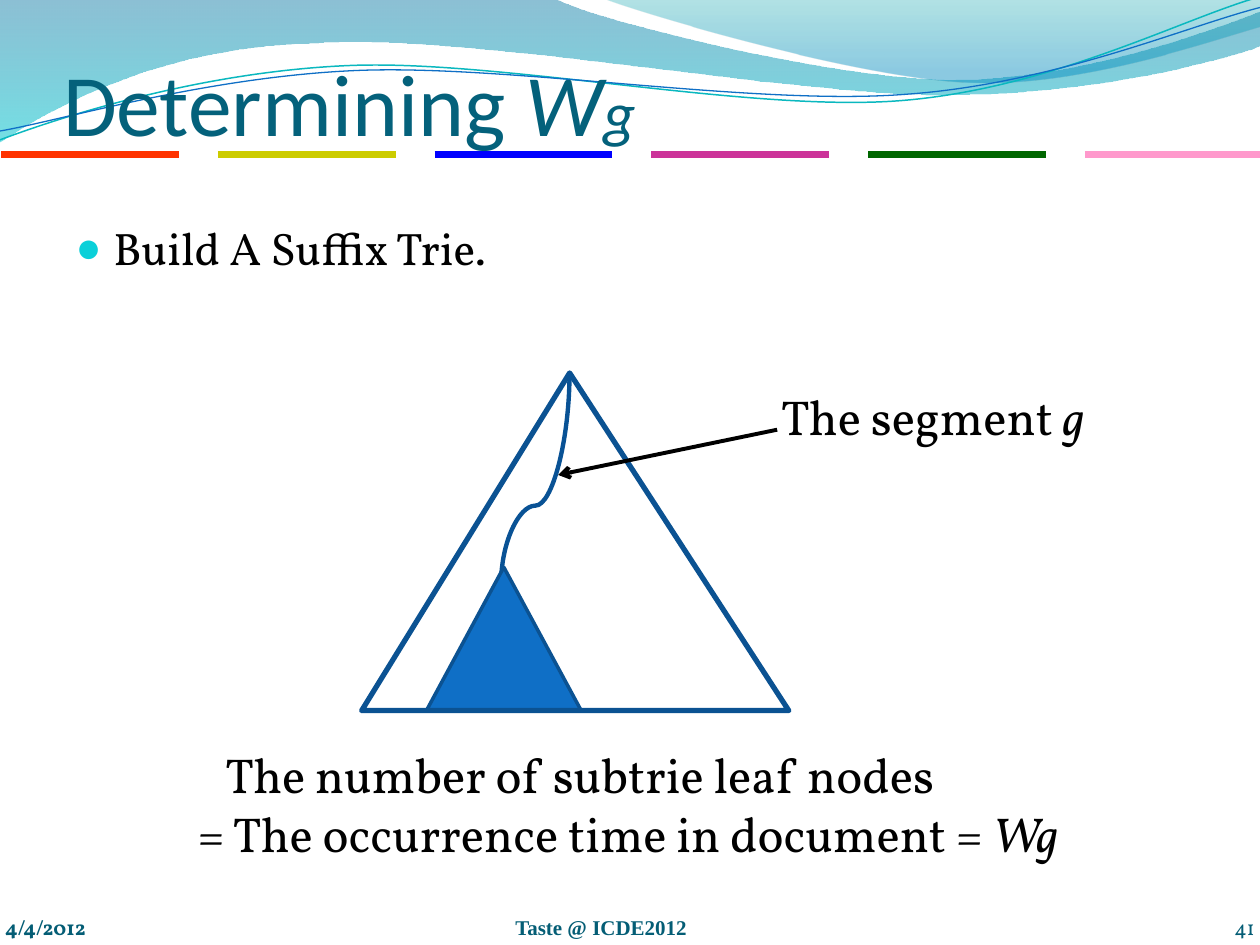
import math
import pptx
import pptx.util
import pptx.dml.color
import pptx.enum.shapes
import pptx.enum.text
import pptx.oxml
import pptx.oxml.ns

WIDTH, HEIGHT = 10, 7.5
SHAPES = pptx.enum.shapes.MSO_SHAPE
LINES = pptx.enum.shapes.MSO_CONNECTOR
ANCHOR = pptx.enum.text.MSO_ANCHOR
ALIGN = pptx.enum.text.PP_ALIGN
FIT = pptx.enum.text.MSO_AUTO_SIZE
INK = "000000"
FOOT_INK = "045D75"


def inch(value):
    """Return a length in inches."""
    return pptx.util.Inches(value)


def rgb(colour):
    """Turn a hex string into a colour."""
    return pptx.dml.color.RGBColor.from_string(colour)


def element(tag, **attributes):
    """Make a DrawingML element."""
    made = pptx.oxml.parse_xml(f"<a:{tag} {pptx.oxml.ns.nsdecls('a')}/>")
    for name, value in attributes.items():
        made.set(name, value)
    return made


def apply(target, values):
    """Set each attribute named in a dict."""
    for name, value in values.items():
        setattr(target, name, value)


def part(box, x, y, w=0, h=0):
    """Return the sub-box given by shares of a box."""
    left, top, width, height = box
    return left + x * width, top + y * height, w * width, h * height


def outline(shape, colour, weight):
    """Give a shape or connector its line."""
    shape.line.color.rgb = rgb(colour)
    shape.line.width = pptx.util.Pt(weight)


def connect(slide, kind, start, end, colour, weight):
    """Draw a connector without a shadow."""
    link = slide.shapes.add_connector(kind, *map(inch, (*start, *end)))
    outline(link, colour, weight)
    link._element.spPr.append(element("effectLst"))
    return link


def write(paragraph, runs, size, font, colour, **style):
    """Write runs of (text, changed font values) in a paragraph."""
    base = dict(size=pptx.util.Pt(size), name=font, **style)
    for text, changes in runs:
        run = paragraph.add_run()
        run.text = text
        apply(run.font, {**base, **changes})
        run.font.color.rgb = rgb(colour)


def turn(point, pivot, degrees):
    """Turn a point clockwise about a pivot."""
    angle = math.radians(degrees)
    dx, dy = point[0] - pivot[0], point[1] - pivot[1]
    return (pivot[0] + dx * math.cos(angle) - dy * math.sin(angle),
            pivot[1] + dx * math.sin(angle) + dy * math.cos(angle))


def wave(slide, box, start, segments, closed, tilt=0, pivot=(0, 0)):
    """Draw cubic curves and straight steps on a grid of ten columns."""
    left, top, width, _ = box
    cell = width / 10
    pairs = [start] + [step[i:i + 2] for step in segments for i in range(0, len(step), 2)]
    points = [(inch(left + x * cell), inch(top + y * cell))
              for x, y in (turn(pair, pivot, tilt) for pair in pairs)]
    builder = slide.shapes.build_freeform(*points[0])
    builder.add_line_segments(points[1:], close=closed)
    shape = builder.convert_to_shape()
    shape.shadow.inherit = False
    shape.rotation = -tilt % 360
    steps = iter(list(shape._element.iter(pptx.oxml.ns.qn("a:lnTo"))))
    for segment in segments:
        first = next(steps)
        if len(segment) == 6:
            bend = element("cubicBezTo")
            first.addprevious(bend)
            for step in (first, next(steps), next(steps)):
                bend.append(step[0])
                step.getparent().remove(step)
    return shape


def header_waves(slide, box):
    """Draw the translucent bands and the thin waves."""
    bands = [
        ((0, 0), [(4.4, -0.01), (4.76, 0.17, 6.64, 0.63, 7.58, 0.63), (8.53, 0.63, 9.58, 0.26, 10, 0.09),
                  (10.01, 0.36), (9.83, 0.44, 8.7, 0.76, 7.46, 0.75), (6.22, 0.75, 3.82, 0.28, 2.57, 0.34),
                  (1.29, 0.36, 0.46, 0.83, -0.01, 1.13), (0, 0)],
         [(0, "0074A1", 45), (1, "00C6CF", 55)]),
        ((4.79, -0.01), [(5.09, 0.11, 6.82, 0.62, 7.69, 0.65), (8.56, 0.69, 9.61, 0.32, 10, 0.21),
                         (10, 0), (4.79, -0.01)],
         [(0, "00A1A9", 30), (0.8, "008BBF", 45)]),
    ]
    for start, segments, stops in bands:
        band = wave(slide, box, start, segments, True)
        band.line.fill.background()
        band.fill.gradient()
        band.fill.gradient_angle = 270
        for stop, (position, colour, opacity) in zip(band.fill.gradient_stops, stops):
            stop.position = position
            stop.color.rgb = rgb(colour)
        colours = band._element.spPr.iter(pptx.oxml.ns.qn("a:srgbClr"))
        for colour, stop in zip(colours, stops):
            colour.append(element("alpha", val=str(stop[2] * 1000)))
    threads = [
        ((0, 1.11), [(0.48, 0.93, 1.58, 0.57, 2.77, 0.52), (3.95, 0.47, 5.93, 0.89, 7.13, 0.8),
                     (8.33, 0.71, 9.38, 0.15, 9.98, -0.02)], "0AB8BF", 0.85, (4.99, 0.58)),
        ((0, 1.04), [(0.47, 0.96, 1.64, 0.61, 2.83, 0.56), (4.03, 0.51, 5.97, 0.84, 7.17, 0.75),
                     (8.36, 0.67, 9.41, 0.21, 10, 0.06)], "0F6FC6", 0.75, (5, 0.59)),
    ]
    for start, segments, colour, weight, pivot in threads:
        thread = wave(slide, box, start, segments, False, 2.7, pivot)
        thread.fill.background()
        outline(thread, colour, weight)


def colour_rule(slide, box):
    """Draw the row of evenly spaced coloured dashes."""
    left, top, width, _ = box
    pitch, dash = width * 0.172, width * 0.141
    for column, colour in enumerate(("FF3300", "CCCC00", "0000FF", "CC3399", "006600", "FF99CC")):
        x = left + column * pitch
        connect(slide, LINES.STRAIGHT, (x, top), (x + dash, top), colour, 4)


def place(slide, holder, box):
    """Move a placeholder to a box, in front of what is drawn."""
    apply(holder, dict(zip(("left", "top", "width", "height"), map(inch, box))))
    slide.shapes._spTree.append(holder._element)
    holder.text_frame.auto_size = FIT.NONE
    return holder.text_frame


def heading(slide, box):
    """Fill the title."""
    frame = place(slide, slide.shapes.title, box)
    apply(frame, dict(margin_left=0, margin_right=0, margin_bottom=0, vertical_anchor=ANCHOR.BOTTOM))
    title = frame.paragraphs[0]
    title.alignment = ALIGN.LEFT
    runs = [("Determining ", {}), ("W", {"italic": True}), ("g", {"italic": True, "size": pptx.util.Pt(36)})]
    write(title, runs, 50, "Calibri", "04617B")


def bullets(slide, box):
    """Fill the body list."""
    item = place(slide, slide.placeholders[1], box).paragraphs[0]
    item.space_before = 0
    properties = item._p.get_or_add_pPr()
    properties.set("marL", str(inch(0.3)))
    properties.set("indent", str(inch(-0.3)))
    tint = element("buClr")
    tint.append(element("srgbClr", val="0BD0D9"))
    for mark in (tint, element("buSzPct", val="95000"), element("buChar", char="●")):
        properties.append(mark)
    write(item, [("Build A Suffix Trie.", {})], 26, "Vollkorn", INK)


def triangle(slide, box, peak, weight, fill=None):
    """Draw a triangle with its peak at a share of the width."""
    shape = slide.shapes.add_shape(SHAPES.ISOSCELES_TRIANGLE, *map(inch, box))
    shape.shadow.inherit = False
    shape.adjustments[0] = peak
    outline(shape, "0B5292", weight)
    if fill:
        shape.fill.solid()
        shape.fill.fore_color.rgb = rgb(fill)
    else:
        shape.fill.background()


def caption(slide, box, lines):
    """Write lines of (indent, runs) in a box that grows."""
    frame = slide.shapes.add_textbox(*map(inch, box)).text_frame
    apply(frame, dict(word_wrap=False, auto_size=FIT.SHAPE_TO_FIT_TEXT))
    for row, (indent, runs) in enumerate(lines):
        line = frame.add_paragraph() if row else frame.paragraphs[0]
        if indent:
            line._p.get_or_add_pPr().set("marL", str(inch(indent)))
        write(line, runs, 28, "Vollkorn", INK)


def segment_curve(slide, start, end):
    """Draw the S-shaped connector that runs down from start to end."""
    middle_x, middle_y = (start[0] + end[0]) / 2, (start[1] + end[1]) / 2
    half_w, half_h = (end[1] - start[1]) / 2, (start[0] - end[0]) / 2
    link = connect(slide, LINES.CURVE, (middle_x + half_w, middle_y + half_h),
                   (middle_x - half_w, middle_y - half_h), "095295", 2.5)
    properties = link._element.spPr
    properties.find(pptx.oxml.ns.qn("a:xfrm")).set("rot", str(270 * 60000))
    guides = properties.find(pptx.oxml.ns.qn("a:prstGeom")).get_or_add_avLst()
    guides.append(element("gd", name="adj1", fmla="val 63400"))


def suffix_trie(slide, box):
    """Draw the trie, its subtrie and the labelled segment."""
    triangle(slide, box, 0.487, 3)
    segment_curve(slide, part(box, 0.487, 0)[:2], part(box, 0.327, 0.62)[:2])
    triangle(slide, part(box, 0.153, 0.575, 0.36, 0.422), 0.5, 2, "0F6FC6")
    arrow = connect(slide, LINES.STRAIGHT, part(box, 0.973, 0.168)[:2], part(box, 0.46, 0.302)[:2], INK, 2.25)
    arrow.line._get_or_add_ln().append(element("tailEnd", type="arrow"))
    caption(slide, part(box, 0.953, 0.022, 0.785, 0.213), [(0, [("The segment ", {}), ("g", {"italic": True})])])


def footer(slide, box):
    """Write the date, the event and the page number."""
    entries = [(0.004, 0.233, "4/4/2012", "Vollkorn", True, ALIGN.LEFT),
               (0.409, 0.367, "Taste @ ICDE2012", "Times New Roman", True, ALIGN.LEFT),
               (0.913, 0.083, "41", "Vollkorn", False, ALIGN.RIGHT)]
    for x, width, text, font, bold, align in entries:
        frame = slide.shapes.add_textbox(*map(inch, part(box, x, 0, width, 1))).text_frame
        apply(frame, dict(margin_left=0, margin_right=0, margin_top=0, margin_bottom=0,
                          word_wrap=True, vertical_anchor=ANCHOR.BOTTOM))
        frame.paragraphs[0].alignment = align
        write(frame.paragraphs[0], [(text, {})], 12, font, FOOT_INK, bold=bold)


def main():
    """Build the slide and save it."""
    deck = pptx.Presentation()
    apply(deck, dict(slide_width=inch(WIDTH), slide_height=inch(HEIGHT)))
    slide = deck.slides.add_slide(deck.slide_layouts[1])
    header_waves(slide, (0, 0, WIDTH, HEIGHT))
    colour_rule(slide, (0.01, 1.23, WIDTH, 0))
    heading(slide, (0.5, -0.03, 9, 1.25))
    bullets(slide, (0.5, 1.7, 9, 5.21))
    suffix_trie(slide, (2.87, 2.96, 3.39, 2.68))
    caption(slide, (1.47, 5.86, 7.21, 1.04), [
        (0.22, [("The number of subtrie leaf nodes", {})]),
        (0, [("= The occurrence time in document = ", {}), ("Wg", {"italic": True})])])
    footer(slide, (0, 7.06, WIDTH, 0.4))
    deck.save("out.pptx")


if __name__ == "__main__":
    main()
